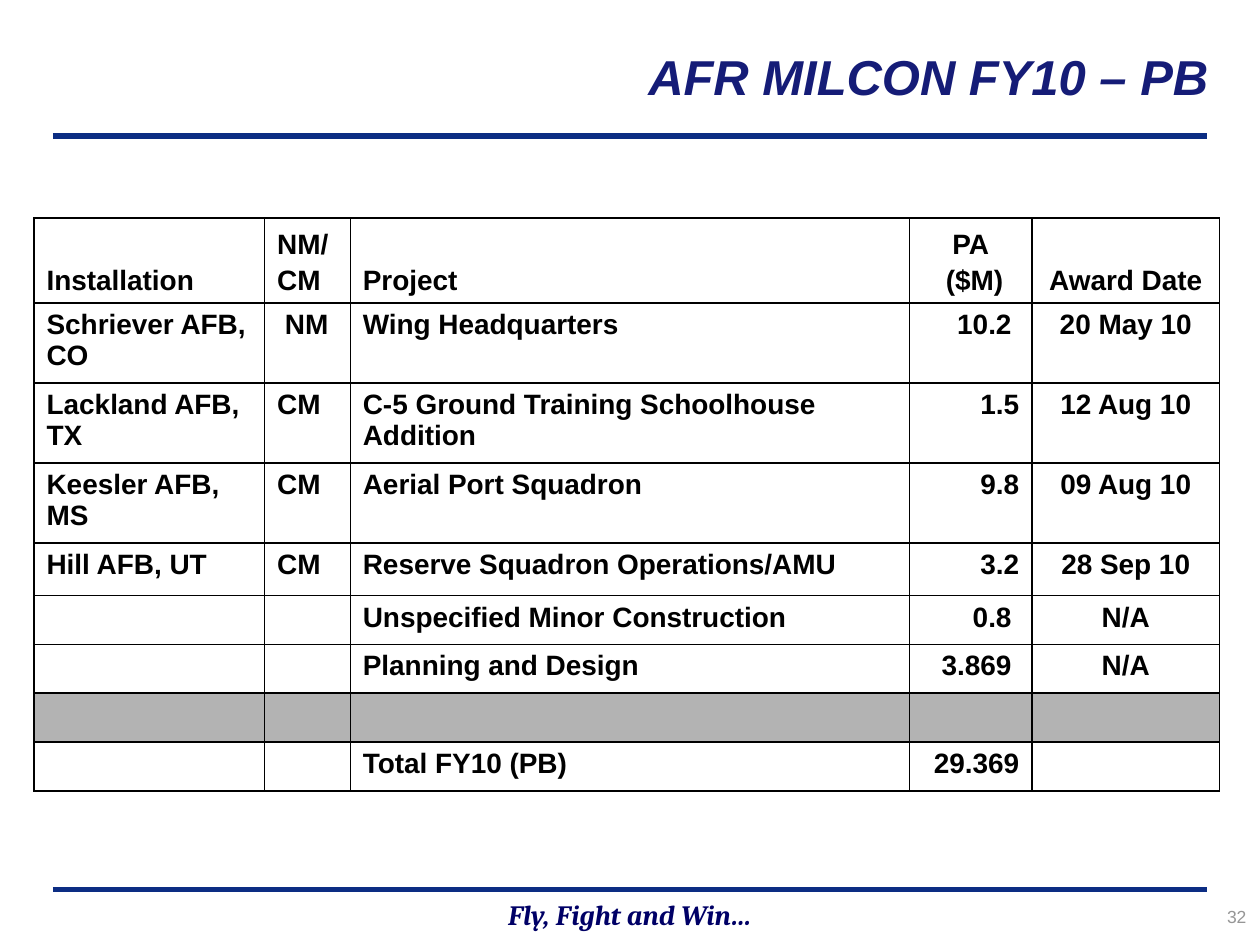
from dataclasses import dataclass

from lxml import etree
from pptx import Presentation
from pptx import util as u
from pptx.dml.color import RGBColor
from pptx.enum import shapes, text
from pptx.oxml.ns import qn

NAVY = RGBColor(0x15, 0x1C, 0x77)
RULE_BLUE = RGBColor(0x0C, 0x2D, 0x83)
MOTTO_BLUE = RGBColor(0x00, 0x00, 0x66)
NUMBER_GREY = RGBColor(0x96, 0x96, 0x96)
BAND_GREY = RGBColor(0xB3, 0xB3, 0xB3)
BLACK = RGBColor(0x00, 0x00, 0x00)

LEFT, CENTER, RIGHT = text.PP_ALIGN.LEFT, text.PP_ALIGN.CENTER, text.PP_ALIGN.RIGHT
TOP, MIDDLE, BOTTOM = (text.MSO_ANCHOR.TOP, text.MSO_ANCHOR.MIDDLE,
                       text.MSO_ANCHOR.BOTTOM)
SLIDE_W, SLIDE_H = u.Inches(10), u.Inches(7.5)


@dataclass(frozen=True)
class Style:
    size: int
    color: RGBColor
    font: str = "Arial"
    bold: bool = True
    italic: bool = False


@dataclass(frozen=True)
class Box:
    """Position and size in percent of the slide."""
    left: float
    top: float
    width: float
    height: float

    def lengths(self) -> tuple[int, int, int, int]:
        return (across(self.left), down(self.top),
                across(self.width), down(self.height))


@dataclass(frozen=True)
class Column:
    width: float
    align: text.PP_ALIGN
    header_align: text.PP_ALIGN


@dataclass(frozen=True)
class Row:
    height: float
    cells: tuple[str, ...]
    fill: RGBColor | None = None


TITLE = Style(28, NAVY, italic=True)
MOTTO = Style(16, MOTTO_BLUE, "Cambria", italic=True)
NUMBER = Style(10, NUMBER_GREY, bold=False)
BODY = Style(16, BLACK)

COLUMNS = (
    Column(18.3, LEFT, LEFT),
    Column(6.8, LEFT, LEFT),
    Column(44.4, LEFT, LEFT),
    Column(9.7, RIGHT, CENTER),
    Column(14.9, CENTER, CENTER),
)
HEADER_H, DOUBLE_H, SINGLE_H, SHORT_H = 8.99, 8.47, 5.55, 5.17
ROWS = (
    Row(HEADER_H, ("Installation", "NM/\nCM", "Project", "PA\n ($M)", "Award Date")),
    Row(DOUBLE_H, ("Schriever AFB, CO", " NM", "Wing Headquarters", "10.2 ", "20 May 10")),
    Row(DOUBLE_H, ("Lackland AFB, TX", "CM", "C-5 Ground Training Schoolhouse Addition",
                   "1.5", "12 Aug 10")),
    Row(DOUBLE_H, ("Keesler AFB, MS", "CM", "Aerial Port Squadron", "9.8", "09 Aug 10")),
    Row(SINGLE_H, ("Hill AFB, UT", "CM", "Reserve Squadron Operations/AMU",
                   "3.2", "28 Sep 10")),
    Row(SHORT_H, ("", "", "Unspecified Minor Construction", "0.8 ", "N/A")),
    Row(SHORT_H, ("", "", "Planning and Design", "3.869 ", "N/A")),
    Row(SHORT_H, ("",) * len(COLUMNS), BAND_GREY),
    Row(SHORT_H, ("", "", "Total FY10 (PB)", "29.369", "")),
)


def across(percent: float) -> int:
    return round(SLIDE_W * percent / 100)


def down(percent: float) -> int:
    return round(SLIDE_H * percent / 100)


def write(frame, content: str, style: Style, align, anchor) -> None:
    frame.word_wrap = True
    frame.vertical_anchor = anchor
    for index, line in enumerate(content.split("\n")):
        paragraph = frame.add_paragraph() if index else frame.paragraphs[0]
        paragraph.alignment = align
        paragraph.space_before = u.Pt(3 if index else 0)
        paragraph.font.size = u.Pt(style.size)
        if line:
            run = paragraph.add_run()
            run.text = line
            font = run.font
            font.name, font.size = style.font, u.Pt(style.size)
            font.bold, font.italic = style.bold, style.italic
            font.color.rgb = style.color


def add_label(slide, box: Box, content: str, style: Style, align, anchor) -> None:
    label = slide.shapes.add_textbox(*box.lengths())
    write(label.text_frame, content, style, align, anchor)


def add_rule(slide, top: float) -> None:
    margin = across(4.2)
    rule = slide.shapes.add_connector(shapes.MSO_CONNECTOR.STRAIGHT, margin, down(top),
                                      SLIDE_W - margin, down(top))
    rule.line.color.rgb = RULE_BLUE
    rule.line.width = u.Pt(3)
    etree.SubElement(rule._element.spPr, qn("a:effectLst"))


def add_borders(cell) -> None:
    properties = cell._tc.get_or_add_tcPr()
    for index, side in enumerate(("a:lnL", "a:lnR", "a:lnT", "a:lnB")):
        border = etree.Element(qn(side), w=str(u.Pt(1)))
        fill = etree.SubElement(border, qn("a:solidFill"))
        etree.SubElement(fill, qn("a:srgbClr"), val=str(BLACK))
        properties.insert(index, border)


def add_projects(slide, left: float, top: float) -> None:
    box = Box(left, top, sum(column.width for column in COLUMNS),
              sum(row.height for row in ROWS))
    table = slide.shapes.add_table(len(ROWS), len(COLUMNS), *box.lengths()).table
    table.first_row = table.horz_banding = False
    for index, column in enumerate(COLUMNS):
        table.columns[index].width = across(column.width)
    for r, row in enumerate(ROWS):
        table.rows[r].height = down(row.height)
        for c, (column, content) in enumerate(zip(COLUMNS, row.cells)):
            cell = table.cell(r, c)
            if row.fill is None:
                cell.fill.background()
            else:
                cell.fill.solid()
                cell.fill.fore_color.rgb = row.fill
            add_borders(cell)
            write(cell.text_frame, content, BODY,
                  column.align if r else column.header_align, TOP)
            cell.vertical_anchor = TOP if r else BOTTOM


def main() -> None:
    deck = Presentation()
    deck.slide_width, deck.slide_height = SLIDE_W, SLIDE_H
    slide = deck.slides.add_slide(deck.slide_layouts[5])

    # Rules and footer
    add_rule(slide, 94.13)
    add_rule(slide, 14.4)
    add_label(slide, Box(0, 94.27, 100, 4.93), "Fly, Fight and Win…", MOTTO, CENTER, MIDDLE)
    add_label(slide, Box(87.4, 95.2, 12.5, 4.4), "32", NUMBER, RIGHT, TOP)

    # Title
    title = slide.shapes.title
    title.left, title.top, title.width, title.height = Box(9.2, 2.27, 87.7, 11.47).lengths()
    write(title.text_frame, "AFR MILCON FY10 – PB", TITLE, RIGHT, MIDDLE)

    # Project table
    add_projects(slide, 2.7, 23.07)

    deck.save("out.pptx")


if __name__ == "__main__":
    main()
